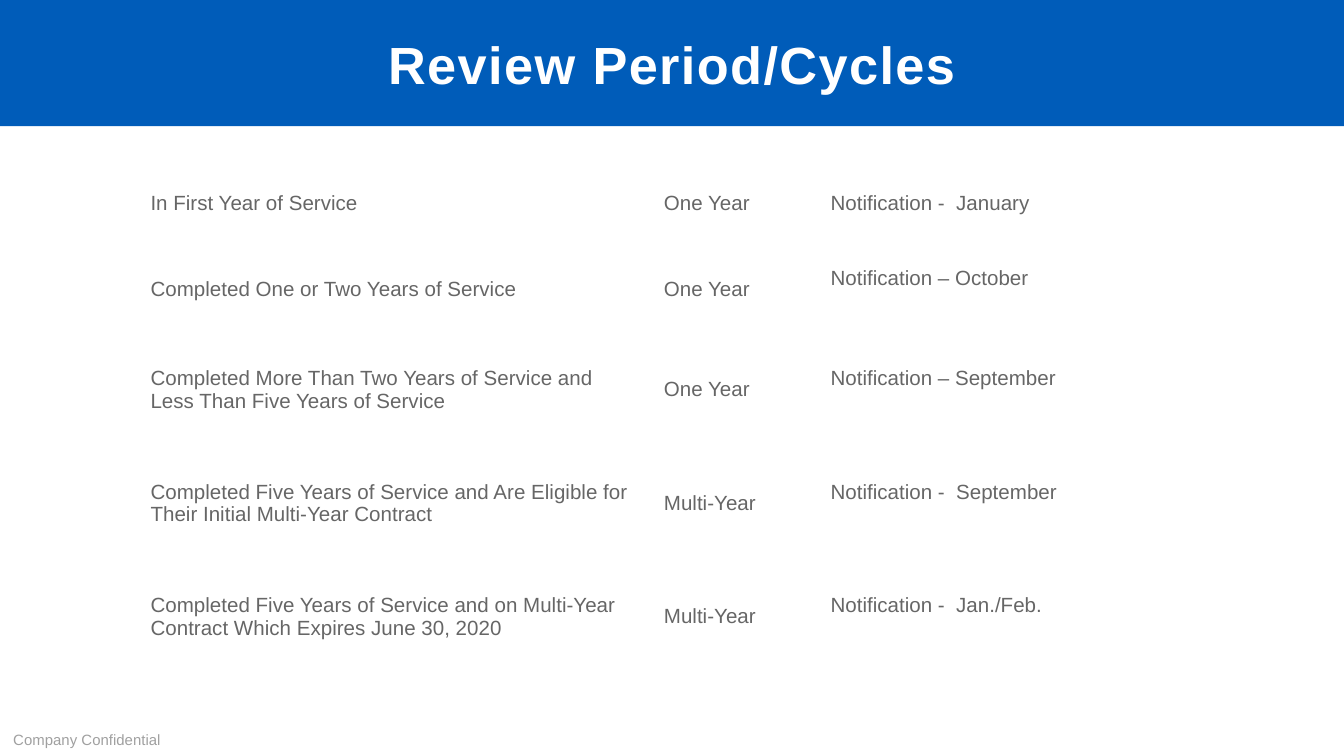
from dataclasses import dataclass

from pptx import Presentation
from pptx.dml.color import RGBColor
from pptx.enum import shapes, text
from pptx.util import Inches, Pt

COLORS = {"banner": "005CB9", "title": "FFFFFF", "body": "666666", "footer": "A0A0A0"}
FONT = "Arial"
COLUMN_WIDTHS = (3.82, 1.24, 2.53)


@dataclass
class Cycle:
    service: str
    period: str
    notification: str
    height: float = 0.84
    lift: float = 0.17


CYCLES = [
    Cycle("In First Year of Service", "One Year", "Notification -  January", 0.64, 0),
    Cycle("Completed One or Two Years of Service", "One Year", "Notification – October", 0.65),
    Cycle("Completed More Than Two Years of Service and Less Than Five Years of Service",
          "One Year", "Notification – September"),
    Cycle("Completed Five Years of Service and Are Eligible for Their Initial Multi-Year Contract",
          "Multi-Year", "Notification -  September", 0.85),
    Cycle("Completed Five Years of Service and on Multi-Year Contract Which Expires June 30, 2020",
          "Multi-Year", "Notification -  Jan./Feb."),
]


def write(frame, wording: str, size: float, color: str, bold: bool = False):
    frame.text = wording
    frame.word_wrap = True
    span = frame.paragraphs[0].runs[0]
    span.font.name = FONT
    span.font.size = Pt(size)
    span.font.bold = bold
    span.font.color.rgb = RGBColor.from_string(COLORS[color])
    return span


def draw_footer(page) -> None:
    box = page.shapes.add_textbox(Inches(0), Inches(5.32), Inches(3.38), Inches(0.3))
    write(box.text_frame, "Company Confidential", 8, "footer")
    box.text_frame.vertical_anchor = text.MSO_ANCHOR.BOTTOM


def draw_cell(cell, wording: str, lift: float) -> None:
    cell.fill.background()
    cell.vertical_anchor = text.MSO_ANCHOR.MIDDLE
    cell.margin_left = Inches(0.08)
    cell.margin_right = Inches(0.1)
    cell.margin_top = Inches(0.04)
    cell.margin_bottom = Inches(0.04 + lift)
    write(cell.text_frame, wording, 11, "body")


def draw_cycles(page, cycles: list[Cycle]) -> None:
    table = page.shapes.add_table(
        len(cycles), len(COLUMN_WIDTHS), Inches(1.04), Inches(1.19),
        Inches(sum(COLUMN_WIDTHS)), Inches(sum(cycle.height for cycle in cycles))).table
    table.first_row = False
    table.horz_banding = False
    for column, width in zip(table.columns, COLUMN_WIDTHS):
        column.width = Inches(width)
    for row, cycle in zip(table.rows, cycles):
        row.height = Inches(cycle.height)
        draw_cell(row.cells[0], cycle.service, 0)
        draw_cell(row.cells[1], cycle.period, 0)
        draw_cell(row.cells[2], cycle.notification, cycle.lift)


def draw_title(page) -> None:
    banner = page.shapes.add_shape(
        shapes.MSO_SHAPE.RECTANGLE, Inches(0), Inches(0), Inches(10), Inches(0.94))
    banner.shadow.inherit = False
    banner.fill.solid()
    banner.fill.fore_color.rgb = RGBColor.from_string(COLORS["banner"])
    banner.line.fill.background()
    span = write(banner.text_frame, "Review Period/Cycles", 28, "title", bold=True)
    span.font._element.set("spc", "80")
    banner.text_frame.paragraphs[0].alignment = text.PP_ALIGN.CENTER
    banner.text_frame.vertical_anchor = text.MSO_ANCHOR.MIDDLE


def main() -> None:
    deck = Presentation()
    deck.slide_width = Inches(10)
    deck.slide_height = Inches(10) * 9 // 16
    page = deck.slides.add_slide(deck.slide_layouts[6])
    draw_footer(page)
    draw_cycles(page, CYCLES)
    draw_title(page)
    deck.save("out.pptx")


if __name__ == "__main__":
    main()
